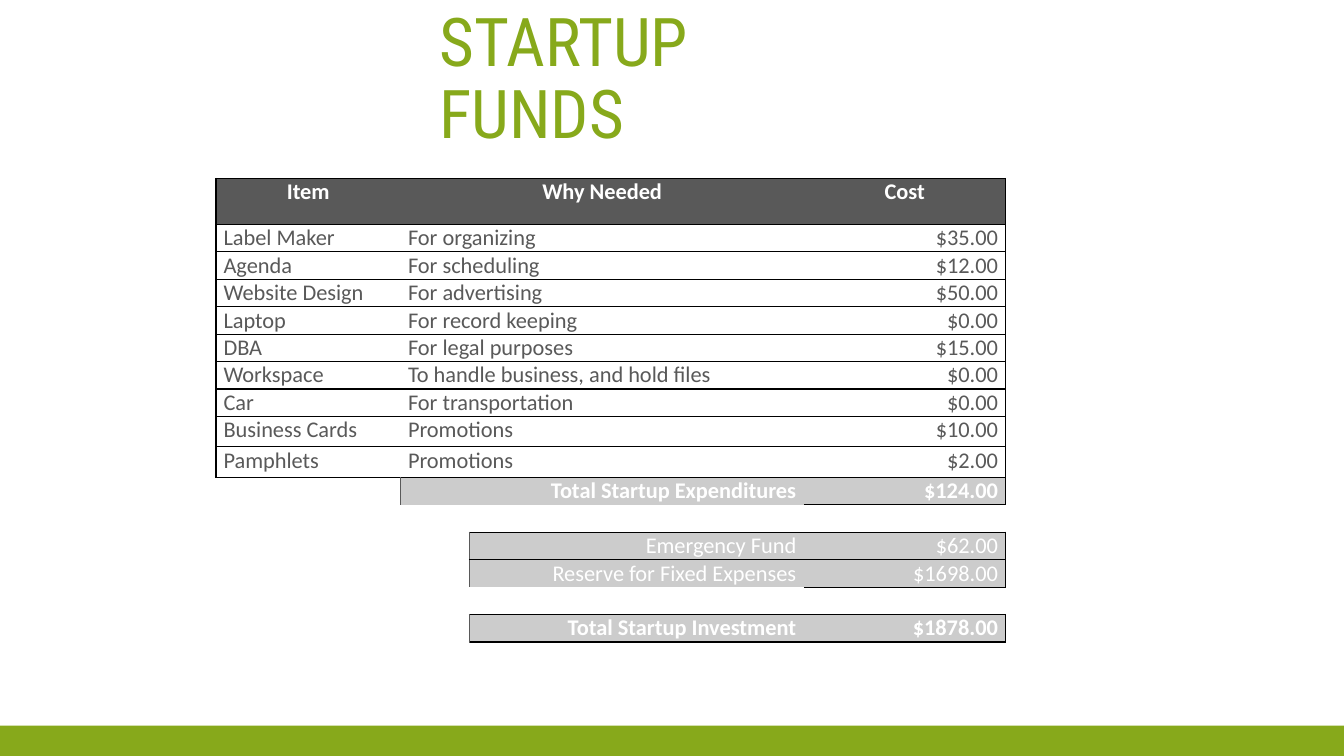
from lxml.etree import SubElement
from pptx import Presentation
from pptx.dml.color import RGBColor
from pptx.enum.shapes import MSO_SHAPE
from pptx.enum.text import MSO_ANCHOR, PP_ALIGN
from pptx.oxml.ns import qn
from pptx.util import Pt

COLORS = {"green": "87A91B", "dark": "595959", "light": "CCCCCC",
          "white": "FFFFFF", "black": "000000"}
LEFT, CENTER, RIGHT = PP_ALIGN.LEFT, PP_ALIGN.CENTER, PP_ALIGN.RIGHT


def color(name):
    return RGBColor.from_string(COLORS[name])


def draw_borders(cell, sides, left_color):
    properties = cell._tc.get_or_add_tcPr()
    for side in "LRTB":
        line = SubElement(properties, qn(f"a:ln{side}"), w=str(Pt(1)))
        if side in sides:
            fill = SubElement(line, qn("a:solidFill"))
            name = left_color if side == "L" else "black"
            SubElement(fill, qn("a:srgbClr"), val=COLORS[name])
        else:
            SubElement(line, qn("a:noFill"))


presentation = Presentation()
presentation.slide_width, presentation.slide_height = Pt(960), Pt(540)
slide = presentation.slides.add_slide(presentation.slide_layouts[6])

# Green footer band
footer = slide.shapes.add_shape(MSO_SHAPE.RECTANGLE, 0, Pt(518.4), Pt(960), Pt(21.6))
footer.shadow.inherit = False
footer.fill.solid()
footer.fill.fore_color.rgb = color("green")
footer.line.fill.background()

# Title
title = slide.shapes.add_textbox(Pt(306.7), Pt(49.7), Pt(314.6), Pt(63.4)).text_frame
title.word_wrap = True
title.vertical_anchor = MSO_ANCHOR.BOTTOM
heading = title.paragraphs[0]
heading.line_spacing = 0.9
heading_run = heading.add_run()
heading_run.text = "STARTUP FUNDS"
for attribute, value in {"name": "Roboto Condensed", "size": Pt(48)}.items():
    setattr(heading_run.font, attribute, value)
heading_run.font.color.rgb = color("green")

# Each row: kind, texts
funds = [
    ("header", "Item", "Why Needed", "Cost"),
    ("item", "Label Maker", "For organizing", "$35.00"),
    ("item", "Agenda", "For scheduling", "$12.00"),
    ("item", "Website Design", "For advertising", "$50.00"),
    ("item", "Laptop", "For record keeping", "$0.00"),
    ("item", "DBA", "For legal purposes", "$15.00"),
    ("item", "Workspace", "To handle business, and hold files", "$0.00"),
    ("item", "Car", "For transportation", "$0.00"),
    ("item", "Business Cards", "Promotions", "$10.00"),
    ("item", "Pamphlets", "Promotions", "$2.00"),
    ("expenditures", "", "Total Startup Expenditures", "$124.00"),
    ("gap", "", ""),
    ("reserve", "", "Emergency Fund", "$62.00"),
    ("reserve", "", "Reserve for Fixed Expenses", "$1698.00"),
    ("gap", "", ""),
    ("investment", "", "Total Startup Investment", "$1878.00"),
]

# Each cell: first column, last column, bordered sides, alignment
item_cells = [(0, 0, "LTB", LEFT), (1, 2, "TB", LEFT), (3, 3, "TRB", RIGHT)]
reserve_cells = [(0, 1, "", LEFT), (2, 2, "LTB", RIGHT), (3, 3, "TRB", RIGHT)]
layouts = {
    "header": [(first, last, sides, CENTER) for first, last, sides, _ in item_cells],
    "item": item_cells,
    "expenditures": [(0, 0, "T", LEFT), (1, 2, "LT", RIGHT), (3, 3, "TRB", RIGHT)],
    "gap": [(0, 2, "", LEFT), (3, 3, "TB", LEFT)],
    "reserve": reserve_cells,
    "investment": reserve_cells,
}

# Each kind: fill, text colour, bold, colour of left border
looks = {
    "header": ("dark", "white", True, "black"),
    "item": ("white", "dark", False, "black"),
    "expenditures": ("light", "white", True, "dark"),
    "gap": ("white", "dark", False, "black"),
    "reserve": ("light", "white", False, "dark"),
    "investment": ("light", "white", True, "dark"),
}

# Table grid
widths = [131.8, 49.2, 239, 144]
heights = [32.8] + [19.6] * 7 + [21.8] * 2 + [19.6] * 6
table = slide.shapes.add_table(len(heights), len(widths), Pt(154.3), Pt(127.5),
                               Pt(sum(widths)), Pt(sum(heights))).table
table.first_row = table.horz_banding = False
for column, width in zip(table.columns, widths):
    column.width = Pt(width)
for row, height in zip(table.rows, heights):
    row.height = Pt(height)

# Table cells
cell_format = {"margin_left": Pt(5.4), "margin_right": Pt(5.4),
               "margin_top": 0, "margin_bottom": 0}
for row_index, (kind, *texts) in enumerate(funds):
    fill_name, text_name, bold, left_color = looks[kind]
    for text, (first, last, sides, alignment) in zip(texts, layouts[kind]):
        cell = table.cell(row_index, first)
        if last > first:
            cell.merge(table.cell(row_index, last))
        for column_index in range(first, last + 1):
            part = table.cell(row_index, column_index)
            part_sides = sides if column_index == first else sides.replace("L", "")
            draw_borders(part, part_sides, left_color)
            for attribute, value in cell_format.items():
                setattr(part, attribute, value)
            part.fill.background()
            if not (text and column_index == first):
                SubElement(part.text_frame.paragraphs[0]._p, qn("a:endParaRPr"), sz="1600")
        if text:
            cell.fill.solid()
            cell.fill.fore_color.rgb = color(fill_name)
            paragraph = cell.text_frame.paragraphs[0]
            paragraph.alignment = alignment
            run = paragraph.add_run()
            run.text = text
            for attribute, value in {"name": "Calibri", "size": Pt(16), "bold": bold}.items():
                setattr(run.font, attribute, value)
            run.font.color.rgb = color(text_name)

presentation.save("out.pptx")
